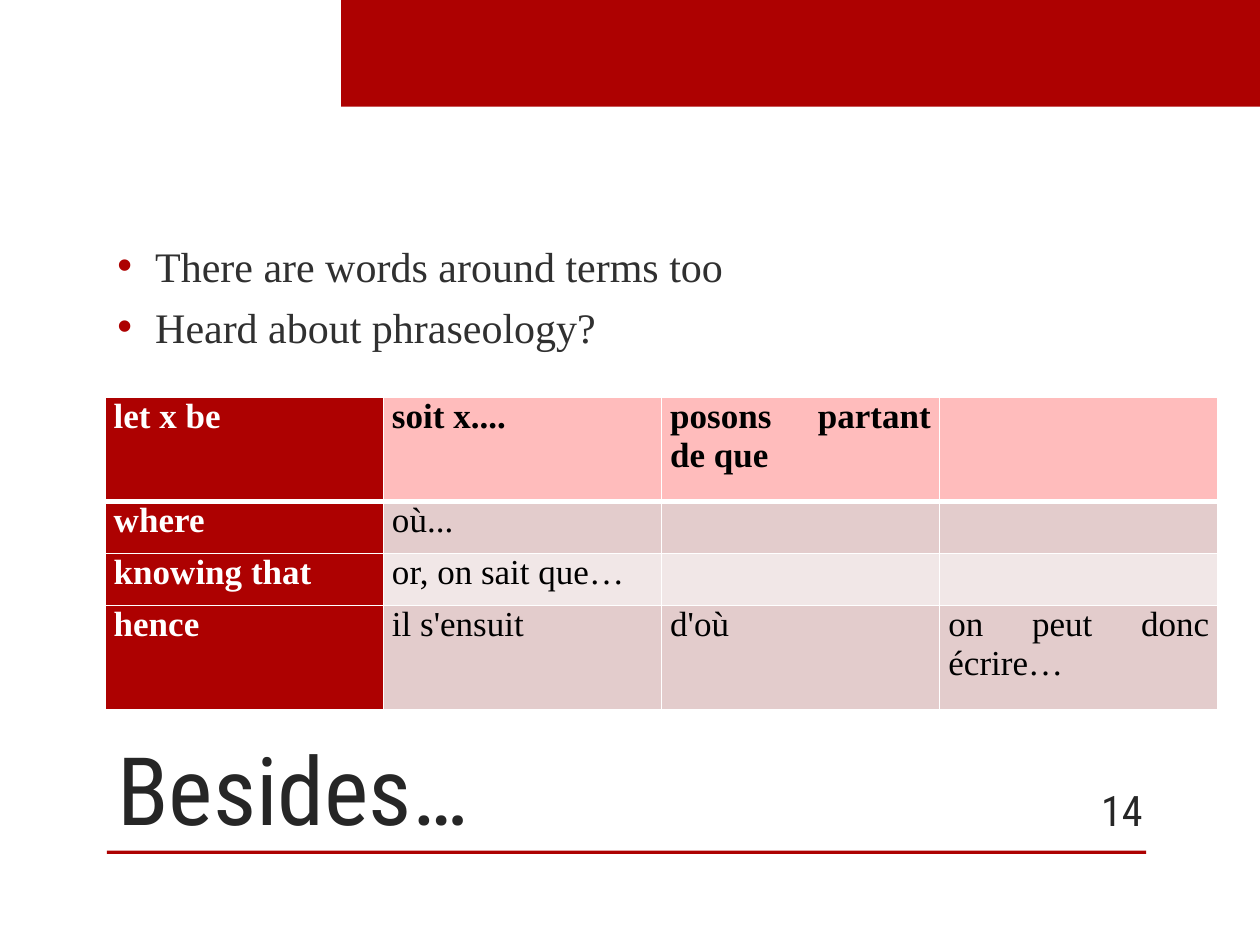
from lxml import etree
from pptx import Presentation
from pptx import util as u
from pptx.dml.color import RGBColor
from pptx.enum import shapes, text
from pptx.oxml.ns import qn

RED, WHITE, BLACK, DARK, BODY = "AD0101", "FFFFFF", "000000", "262626", "303030"
SANS, SERIF = "Roboto Condensed", "Times New Roman"
HEADER_FILL = "FFBCBC"
BAND_FILLS = ["E3CCCC", "F1E7E7"]
COLUMN_WIDTH = 159
ROW_HEIGHTS = [59.5, 29.75, 29.75, 59.5]
PHRASES = [
    ["let x be", "soit x....", "posons partant de que", ""],
    ["where", "où...", "", ""],
    ["knowing that", "or, on sait que…", "", ""],
    ["hence", "il s'ensuit", "d'où", "on peut donc écrire…"],
]


def color(value):
    return RGBColor.from_string(value)


def add_run(paragraph, content, size, font, ink, bold=False):
    run = paragraph.add_run()
    run.text = content
    run.font.size = u.Pt(size)
    run.font.name = font
    run.font.bold = bold
    run.font.color.rgb = color(ink)


def add_bar(slide, left, top, width, height):
    shape = slide.shapes.add_shape(
        shapes.MSO_SHAPE.RECTANGLE, u.Pt(left), u.Pt(top), u.Pt(width), u.Pt(height))
    shape.shadow.inherit = False
    shape.fill.solid()
    shape.fill.fore_color.rgb = color(RED)
    shape.line.fill.background()


def add_text_frame(slide, left, top, width, height, anchor):
    box = slide.shapes.add_textbox(u.Pt(left), u.Pt(top), u.Pt(width), u.Pt(height))
    frame = box.text_frame
    frame.word_wrap = True
    frame.vertical_anchor = anchor
    return frame


def add_bullets(frame, lines):
    for index, line in enumerate(lines):
        paragraph = frame.add_paragraph() if index else frame.paragraphs[0]
        properties = paragraph._p.get_or_add_pPr()
        properties.set("marL", str(u.Pt(21.6)))
        properties.set("indent", str(u.Pt(-21.6)))
        bullet_color = etree.SubElement(properties, qn("a:buClr"))
        etree.SubElement(bullet_color, qn("a:srgbClr"), val=RED)
        etree.SubElement(properties, qn("a:buFont"), typeface="Arial")
        etree.SubElement(properties, qn("a:buChar"), char="•")
        if index:
            paragraph.space_before = u.Pt(6)
        add_run(paragraph, line, 24, SERIF, BODY)


def set_borders(cell, row):
    properties = cell._tc.get_or_add_tcPr()
    widths = {"lnL": 1, "lnR": 1, "lnT": 3 if row == 1 else 1, "lnB": 3 if row == 0 else 1}
    for side, width in widths.items():
        line = etree.SubElement(properties, qn(f"a:{side}"), w=str(u.Pt(width)))
        fill = etree.SubElement(line, qn("a:solidFill"))
        etree.SubElement(fill, qn("a:srgbClr"), val=WHITE)


def fill_cell(cell, row, column, content):
    set_borders(cell, row)
    band = HEADER_FILL if row == 0 else BAND_FILLS[(row - 1) % 2]
    cell.fill.solid()
    cell.fill.fore_color.rgb = color(RED if column == 0 else band)
    if content:
        cell.margin_left = cell.margin_right = u.Pt(5)
        cell.margin_top = cell.margin_bottom = 0
        paragraph = cell.text_frame.paragraphs[0]
        paragraph.alignment = text.PP_ALIGN.JUSTIFY
        ink = WHITE if column == 0 else BLACK
        add_run(paragraph, content, 20, SERIF, ink, row == 0 or column == 0)


def add_phrase_table(slide, left, top):
    columns = len(PHRASES[0])
    table = slide.shapes.add_table(
        len(PHRASES), columns, u.Pt(left), u.Pt(top),
        u.Pt(COLUMN_WIDTH * columns), u.Pt(sum(ROW_HEIGHTS))).table
    for column in table.columns:
        column.width = u.Pt(COLUMN_WIDTH)
    for row, phrases in enumerate(PHRASES):
        table.rows[row].height = u.Pt(ROW_HEIGHTS[row])
        for column, phrase in enumerate(phrases):
            fill_cell(table.cell(row, column), row, column, phrase)


def main():
    presentation = Presentation()
    presentation.slide_width = u.Pt(720)
    presentation.slide_height = u.Pt(540)
    slide = presentation.slides.add_slide(presentation.slide_layouts[6])

    add_bar(slide, 195, 0, 525, 61)
    add_bar(slide, 61, 486, 594, 2)

    title = add_text_frame(slide, 60, 360, 577.5, 126, text.MSO_ANCHOR.BOTTOM)
    add_run(title.paragraphs[0], "Besides…", 54, SANS, DARK)

    body = add_text_frame(slide, 60, 56, 594, 226, text.MSO_ANCHOR.MIDDLE)
    add_bullets(body, ["There are words around terms too", "Heard about phraseology?"])

    number = add_text_frame(slide, 600, 448, 60, 29, text.MSO_ANCHOR.MIDDLE)
    number.paragraphs[0].alignment = text.PP_ALIGN.RIGHT
    add_run(number.paragraphs[0], "14", 24, SANS, DARK)

    add_phrase_table(slide, 60, 227)
    presentation.save("out.pptx")


if __name__ == "__main__":
    main()
